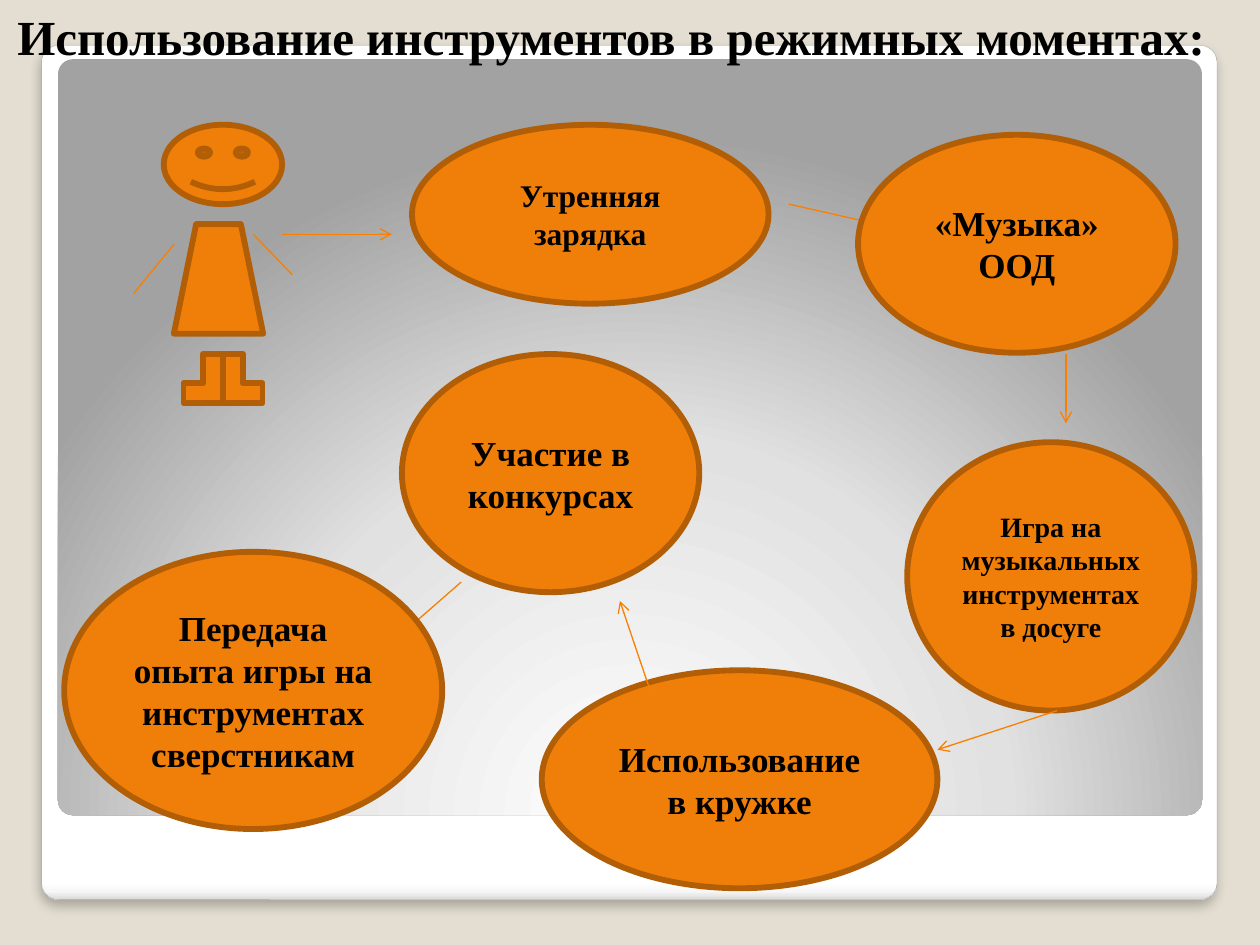
from lxml import etree
from pptx import Presentation
from pptx import util as u
from pptx.dml.color import RGBColor
from pptx.enum import shapes as s, text as t
from pptx.oxml import parse_xml
from pptx.oxml.ns import nsdecls, qn

SAND = RGBColor(0xE3, 0xDE, 0xD1)
AMBER = RGBColor(0xF0, 0x7F, 0x09)
BROWN = RGBColor(0xB2, 0x5E, 0x07)
FLAME = RGBColor(0xF9, 0x7F, 0x00)
GREY = RGBColor(0xA4, 0xA4, 0xA4)
BLACK = RGBColor(0, 0, 0)
FONT = "Times New Roman"
COLS, ROWS = 100, 75
WIDE, HIGH = 10, 7.5
KIND = s.MSO_SHAPE


def spot(box, col, row):
    left, top, wide, high = box
    return u.Inches(left + wide * col / COLS), u.Inches(top + high * row / ROWS)


def span(box, wide, high):
    return spot((0, 0, box[2], box[3]), wide, high)


def write(frame, words, size):
    para = frame.paragraphs[0]
    para.alignment = t.PP_ALIGN.CENTER
    run = para.add_run()
    run.text = words
    run.font.name = FONT
    run.font.size = u.Pt(size)
    run.font.bold = True
    run.font.color.rgb = BLACK


def plain(slide, box, kind, cell):
    shape = slide.shapes.add_shape(kind, *spot(box, *cell[:2]), *span(box, *cell[2:]))
    shape.shadow.inherit = False
    return shape


def part(slide, box, kind, cell):
    shape = plain(slide, box, kind, cell)
    shape.fill.solid()
    shape.fill.fore_color.rgb = AMBER
    shape.line.color.rgb = BROWN
    shape.line.width = u.Pt(3.35)
    return shape


def stroke(slide, box, start, end, head=False):
    line = slide.shapes.add_connector(
        s.MSO_CONNECTOR.STRAIGHT, *spot(box, *start), *spot(box, *end))
    line.line.color.rgb = FLAME
    line.line.width = u.Pt(0.75)
    props = line.element.spPr
    if head:
        etree.SubElement(props.find(qn("a:ln")), qn("a:tailEnd"), type="arrow")
    etree.SubElement(props, qn("a:effectLst"))


def blend(shape, stops, way):
    marks = "".join(
        f'<a:gs pos="{pos * 1000}"><a:srgbClr val="{tint}"/></a:gs>' for pos, tint in stops)
    fill = parse_xml(
        f'<a:gradFill {nsdecls("a")} rotWithShape="1"><a:gsLst>{marks}</a:gsLst>{way}</a:gradFill>')
    shape.element.spPr.find(qn("a:prstGeom")).addnext(fill)


def panels(slide, box):
    card = plain(slide, box, KIND.ROUNDED_RECTANGLE, (3.3, 3.6, 93.3, 67.8))
    blend(card, [(0, "FFFFFF"), (98, "FFFFFF"), (99, "F7F7F7"), (100, "DADADA")],
          '<a:lin ang="5400000" scaled="0"/>')
    card.line.color.rgb = GREY
    card.line.width = u.Pt(0.16)
    card.element.spPr.find(qn("a:effectLst")).append(parse_xml(
        f'<a:outerShdw {nsdecls("a")} blurRad="{u.Pt(6)}" dist="{u.Pt(4)}" dir="5400000">'
        '<a:srgbClr val="000000"><a:alpha val="25000"/></a:srgbClr></a:outerShdw>'))
    field = plain(slide, box, KIND.ROUNDED_RECTANGLE, (4.6, 4.7, 90.8, 60))
    blend(field, [(0, "FFFFFF"), (55, "E1E1E1"), (100, "A2A2A2")],
          '<a:path path="circle"><a:fillToRect l="50000" t="175000" r="50000" b="-75000"/></a:path>')
    field.line.fill.background()
    for shape in (card, field):
        shape.adjustments[0] = 0.02


def figure(slide, box):
    part(slide, box, KIND.TRAPEZOID, (25.4, 26.8, 56.3, 29.5))
    part(slide, box, KIND.SMILEY_FACE, (19, 0, 74.6, 21.4))
    part(slide, box, KIND.CORNER, (56.3, 61.8, 25, 13.2))
    shoe = part(slide, box, KIND.CORNER, (31.5, 61.8, 25, 13.2))
    shoe.element.spPr.find(qn("a:xfrm")).set("flipH", "1")
    stroke(slide, box, (75.4, 29.5), (100, 40.4))
    stroke(slide, box, (25.4, 32.2), (0, 45.5))


def cycle(slide, box):
    steps = [
        ((22.4, 18.6), (31.1, 18.6), (32.7, 9.9, 28.3, 14.2), "Утренняя зарядка", 18),
        ((62.6, 16.2), (69.7, 17.8), (68.1, 10.7, 25.2, 17.3), "«Музыка» ООД", 20),
        ((84.6, 28.1), (84.6, 33.6), (72, 35.1, 22.8, 21.3),
         "Игра на музыкальных инструментах в досуге", 16),
        ((83.9, 56.4), (74.4, 59.5), (43, 53.2, 31.4, 17.3), "Использование в кружке", 20),
        ((51.6, 54.8), (49.2, 47.7), (31.9, 28.1, 23.6, 18.9), "Участие в конкурсах", 20),
        ((36.6, 46.2), (30.3, 51.7), (5.1, 43.8, 30, 22),
         "Передача опыта игры на инструментах сверстникам", 20),
    ]
    for start, end, cell, words, size in steps:
        stroke(slide, box, start, end, head=True)
        frame = part(slide, box, KIND.OVAL, cell).text_frame
        frame.word_wrap = True
        frame.vertical_anchor = t.MSO_ANCHOR.MIDDLE
        write(frame, words, size)


def title(slide, box):
    head = slide.shapes.title
    head.left, head.top = spot(box, 0, 0)
    head.width, head.height = span(box, 97, 5.7)
    frame = head.text_frame
    frame.auto_size = t.MSO_AUTO_SIZE.NONE
    frame.word_wrap = False
    frame.vertical_anchor = t.MSO_ANCHOR.TOP
    frame.margin_left = frame.margin_right = 0
    write(frame, "Использование инструментов в режимных моментах:", 28)
    head.element.getparent().append(head.element)


def main():
    deck = Presentation()
    deck.slide_width, deck.slide_height = u.Inches(WIDE), u.Inches(HIGH)
    slide = deck.slides.add_slide(deck.slide_layouts[5])
    slide.background.fill.solid()
    slide.background.fill.fore_color.rgb = SAND
    page = (0, 0, WIDE, HIGH)
    panels(slide, page)
    figure(slide, (1.06, 0.99, 1.26, 2.21))
    cycle(slide, page)
    title(slide, page)
    deck.save("out.pptx")


if __name__ == "__main__":
    main()
